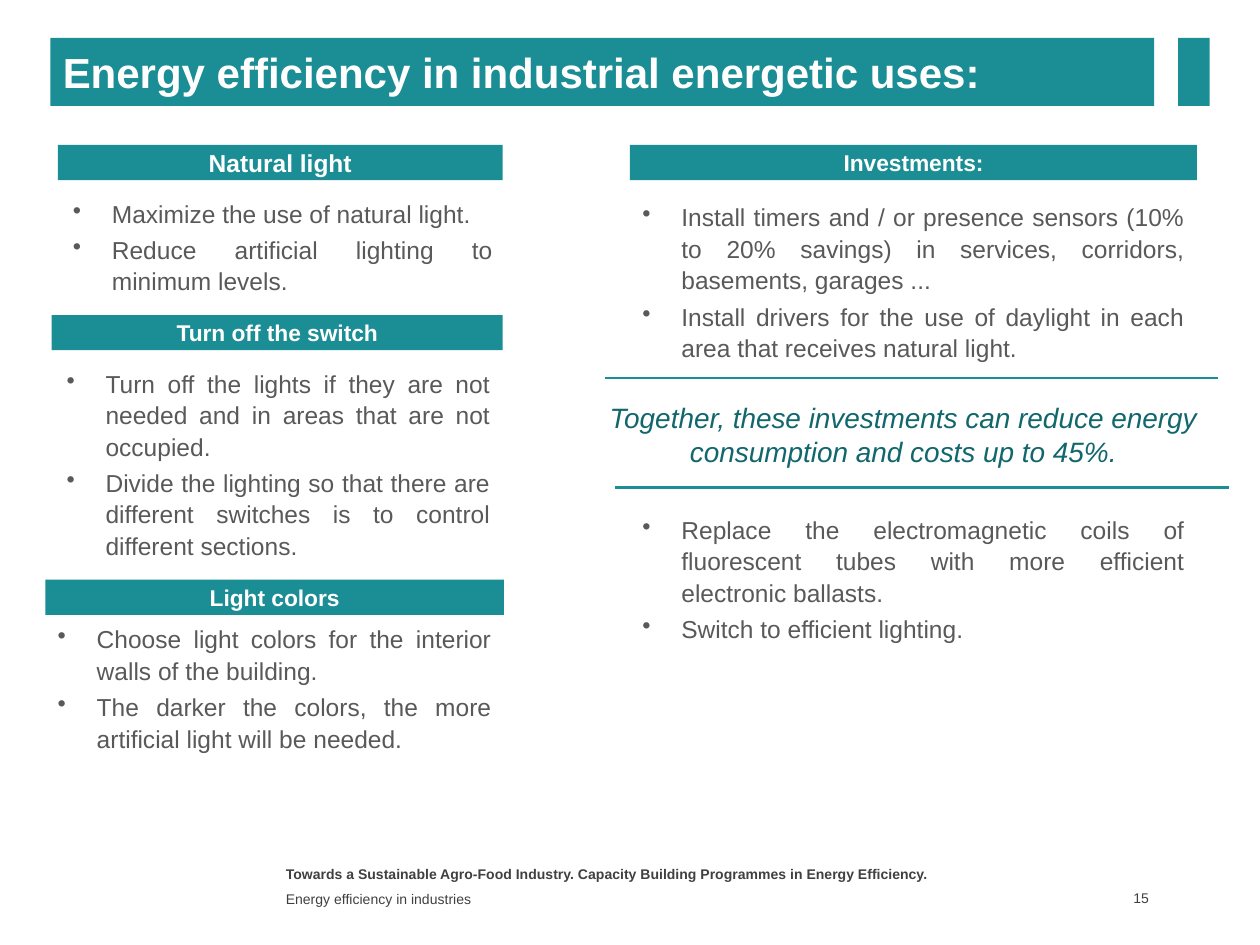
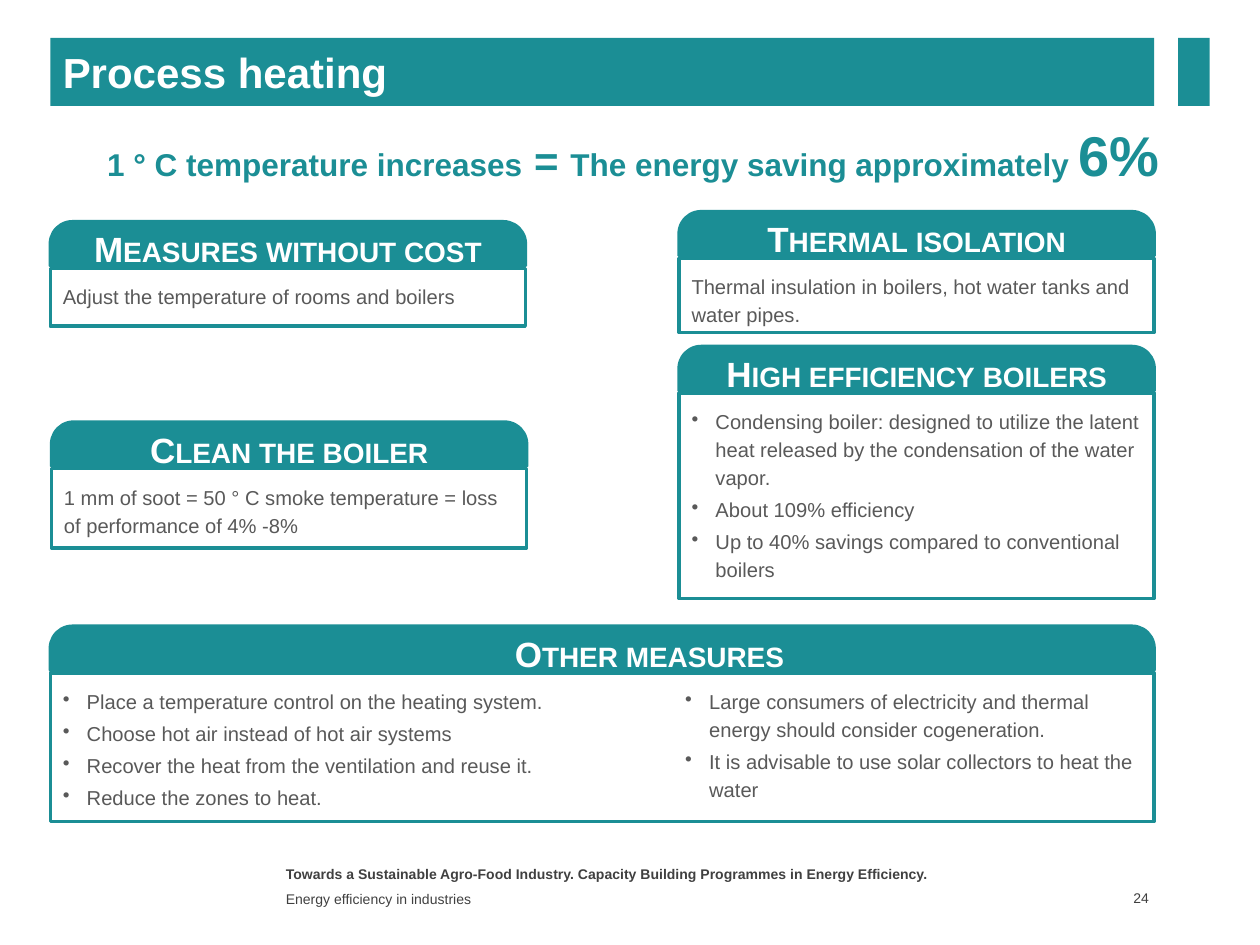
"""Builds two slides on energy efficiency in industry."""
from dataclasses import dataclass

from lxml.etree import SubElement
from pptx import Presentation
from pptx.dml.color import RGBColor
from pptx.enum.shapes import MSO_CONNECTOR, MSO_SHAPE
from pptx.enum.text import MSO_ANCHOR, PP_ALIGN
from pptx.oxml.ns import qn
from pptx.util import Inches, Pt


@dataclass(frozen=True)
class Theme:
    """Colours, font and type sizes of the deck."""

    teal: str = "1B8E95"
    deep_teal: str = "11676C"
    white: str = "FFFFFF"
    body: str = "595959"
    footer: str = "404040"
    font: str = "Arial"
    title_size: float = 24
    banner_size: float = 13
    bullet_size: float = 14
    quote_size: float = 16
    card_title_size: float = 20
    card_size: float = 11.5
    footer_size: float = 8


THEME = Theme()
COLUMNS, ROWS = 100, 75
LEFT, FULL_WIDTH, CARD_WIDTH, RIGHT_CARD = 4, 87.6, 37.7, 53.9
BANNER_HEIGHT = 2.8


def grid(*cells):
    """Turn columns or rows of the grid into lengths."""
    return [Inches(round(cell * 10 / COLUMNS, 2)) for cell in cells]


def style(r, size, color, bold=False, italic=False):
    """Format one run."""
    r.font.name, r.font.size = THEME.font, Pt(size)
    r.font.bold, r.font.italic = bold, italic
    r.font.color.rgb = RGBColor.from_string(color)


def write(tf, text, size, color, align=PP_ALIGN.LEFT, anchor=MSO_ANCHOR.MIDDLE, **looks):
    """Write one formatted paragraph into a text frame."""
    tf.word_wrap, tf.vertical_anchor = True, anchor
    tf.text = text
    p = tf.paragraphs[0]
    p.alignment = align
    style(p.runs[0], size, color, **looks)


def add_label(s, box, text, size, color, **looks):
    """Add a text box with one paragraph."""
    sp = s.shapes.add_textbox(*grid(*box))
    write(sp.text_frame, text, size, color, **looks)
    return sp


def add_block(s, box, kind=MSO_SHAPE.RECTANGLE, filled=True, outlined=False):
    """Add a teal shape, filled, outlined or both."""
    sp = s.shapes.add_shape(kind, *grid(*box))
    sp.shadow.inherit = False
    teal = RGBColor.from_string(THEME.teal)
    if filled:
        sp.fill.solid()
        sp.fill.fore_color.rgb = teal
    else:
        sp.fill.background()
    if outlined:
        sp.line.color.rgb, sp.line.width = teal, Pt(2)
    else:
        sp.line.fill.background()
    return sp


def add_rule(s, col, row, cols):
    """Add a horizontal teal line."""
    x1, x2, y = grid(col, col + cols, row)
    line = s.shapes.add_connector(MSO_CONNECTOR.STRAIGHT, x1, y, x2, y)
    line.line.color.rgb, line.line.width = RGBColor.from_string(THEME.teal), Pt(1.5)
    SubElement(line._element.spPr, qn("a:effectLst"))


def add_paragraphs(s, box, texts, size, leading, indent=0, align=PP_ALIGN.LEFT):
    """Add body paragraphs, bulleted when they have an indent."""
    tf = s.shapes.add_textbox(*grid(*box)).text_frame
    tf.word_wrap = True
    tf.text = "\n".join(texts)
    for i, p in enumerate(tf.paragraphs):
        if indent:
            props = p._p.get_or_add_pPr()
            props.set("marL", str(Inches(indent)))
            props.set("indent", str(-Inches(indent)))
            SubElement(props, qn("a:buChar"), char="•")
        p.alignment, p.line_spacing = align, Pt(leading)
        p.space_before = Pt(size * 0.2 if i else 0)
        style(p.runs[0], size, THEME.body)


def add_bullets(s, box, texts):
    """Add justified bullets under a banner."""
    add_paragraphs(s, box, texts, THEME.bullet_size, 18, 0.31, PP_ALIGN.JUSTIFY)


def add_banner(s, col, row, cols, text, size=THEME.banner_size):
    """Add a section banner."""
    sp = add_block(s, (col, row, cols, BANNER_HEIGHT))
    write(sp.text_frame, text, size, THEME.white, align=PP_ALIGN.CENTER, bold=True)


def add_card(s, col, row, rows, title, bodies, cols=CARD_WIDTH, indent=0, title_col=None):
    """Add a card with a rounded header; bodies hold (column, width, texts)."""
    add_block(s, (col, row + 3.7, cols, rows), filled=False, outlined=True)
    head = add_block(s, (col, row, cols, 3.5), MSO_SHAPE.ROUND_2_SAME_RECTANGLE, outlined=True)
    head.adjustments[0], head.adjustments[1] = 0.5, 0
    box = (col if title_col is None else title_col, row, CARD_WIDTH, 4.4)
    label = add_label(s, box, title, THEME.card_title_size, THEME.white,
                      align=PP_ALIGN.CENTER, anchor=MSO_ANCHOR.TOP, bold=True)
    run = label.text_frame.paragraphs[0].runs[0]
    run._r.get_or_add_rPr().set("cap", "small")
    for body_col, width, texts in bodies:
        add_paragraphs(s, (body_col, row + 4.2, width, rows - 0.6), texts,
                       THEME.card_size, 16, indent)


def add_slide(prs, title, number):
    """Add a blank slide with title band and footer."""
    s = prs.slides.add_slide(prs.slide_layouts[6])
    band = add_block(s, (LEFT, 3, FULL_WIDTH, 5.4))
    write(band.text_frame, title, THEME.title_size, THEME.white, bold=True)
    add_block(s, (93.5, 3, 2.5, 5.4))
    small = THEME.footer_size, THEME.footer
    add_label(s, (21.7, 68.2, 55, 2.1),
              "Towards a Sustainable Agro-Food Industry. "
              "Capacity Building Programmes in Energy Efficiency.",
              *small, anchor=MSO_ANCHOR.TOP, bold=True)
    add_label(s, (21.7, 70.4, 55, 1.9), "Energy efficiency in industries", *small)
    page = add_label(s, (86, 70.3, 5.6, 2), str(number), *small, align=PP_ALIGN.RIGHT)
    page.text_frame.margin_right = Inches(0.04)
    return s


def build_lighting(prs):
    """Build the slide on lighting measures."""
    s = add_slide(prs, "Energy efficiency in industrial energetic uses:", 15)
    add_banner(s, 4.6, 11.5, 35.3, "Natural light", THEME.bullet_size)
    add_bullets(s, (4.8, 15.1, 35.3, 9.1), [
        "Maximize the use of natural light.",
        "Reduce artificial lighting to minimum levels."])
    add_banner(s, 4.1, 25, 35.8, "Turn off the switch")
    add_bullets(s, (4.3, 28.6, 35.6, 16.6), [
        "Turn off the lights if they are not needed and in areas that are not occupied.",
        "Divide the lighting so that there are different switches is to control "
        "different sections."])
    add_banner(s, 3.6, 46, 36.4, "Light colors")
    add_bullets(s, (3.6, 48.9, 36.4, 15), [
        "Choose light colors for the interior walls of the building.",
        "The darker the colors, the more artificial light will be needed."])
    add_banner(s, 50, 11.5, 45, "Investments:")
    add_bullets(s, (50, 15.4, 45, 14), [
        "Install timers and / or presence sensors (10% to 20% savings) in services, "
        "corridors, basements, garages ...",
        "Install drivers for the use of daylight in each area that receives natural light."])
    add_rule(s, 48, 30, 48.7)
    add_label(s, (46.7, 31.3, 50, 6.4),
              "Together, these investments can reduce energy consumption "
              "and costs up to 45%.",
              THEME.quote_size, THEME.deep_teal, align=PP_ALIGN.CENTER,
              anchor=MSO_ANCHOR.TOP, italic=True)
    add_rule(s, 48.8, 38.7, 48.7)
    add_bullets(s, (50, 40.2, 45, 11.5), [
        "Replace the electromagnetic coils of fluorescent tubes with more efficient "
        "electronic ballasts.",
        "Switch to efficient lighting."])


def add_formula(s, box, parts):
    """Add one centred line whose parts differ in size."""
    tf = s.shapes.add_textbox(*grid(*box)).text_frame
    tf.word_wrap, tf.vertical_anchor = True, MSO_ANCHOR.MIDDLE
    p = tf.paragraphs[0]
    p.alignment = PP_ALIGN.CENTER
    for text, size in parts:
        r = p.add_run()
        r.text = text
        style(r, size, THEME.teal, bold=True)


def build_heating(prs):
    """Build the slide on process heating."""
    s = add_slide(prs, "Process heating", 24)
    add_formula(s, (LEFT, 9, 92.5, 6.4), [
        ("1 ° C temperature increases", 18), (" = ", 24),
        ("The energy saving approximately ", 18), ("6%", 32)])
    cards = [
        (LEFT, 17.6, 4.6, "Measures without cost", 0,
         ["Adjust the temperature of rooms and boilers"]),
        (RIGHT_CARD, 16.8, 5.9, "Thermal isolation", 0,
         ["Thermal insulation in boilers, hot water tanks and water pipes."]),
        (LEFT + 0.1, 33.5, 6.3, "Clean the boiler", 0,
         ["1 mm of soot = 50 ° C smoke temperature = loss of performance of 4% -8%"]),
        (RIGHT_CARD, 27.5, 16.3, "High efficiency boilers", 0.19,
         ["Condensing boiler: designed to utilize the latent heat released by the "
          "condensation of the water vapor.",
          "About 109% efficiency",
          "Up to 40% savings compared to conventional boilers"]),
    ]
    for col, row, rows, title, indent, texts in cards:
        add_card(s, col, row, rows, title, [(col, CARD_WIDTH, texts)], indent=indent)
    add_card(s, LEFT, 49.7, 11.8, "Other measures", [
        (LEFT, 46, ["Place a temperature control on the heating system.",
                    "Choose hot air instead of hot air systems",
                    "Recover the heat from the ventilation and reuse it.",
                    "Reduce the zones to heat."]),
        (53.4, CARD_WIDTH, ["Large consumers of electricity and thermal energy should "
                            "consider cogeneration.",
                            "It is advisable to use solar collectors to heat the water"]),
    ], cols=FULL_WIDTH, indent=0.19, title_col=32.7)


def main():
    """Build and save the deck."""
    prs = Presentation()
    prs.slide_width, prs.slide_height = grid(COLUMNS, ROWS)
    build_lighting(prs)
    build_heating(prs)
    prs.save("out.pptx")


if __name__ == "__main__":
    main()
